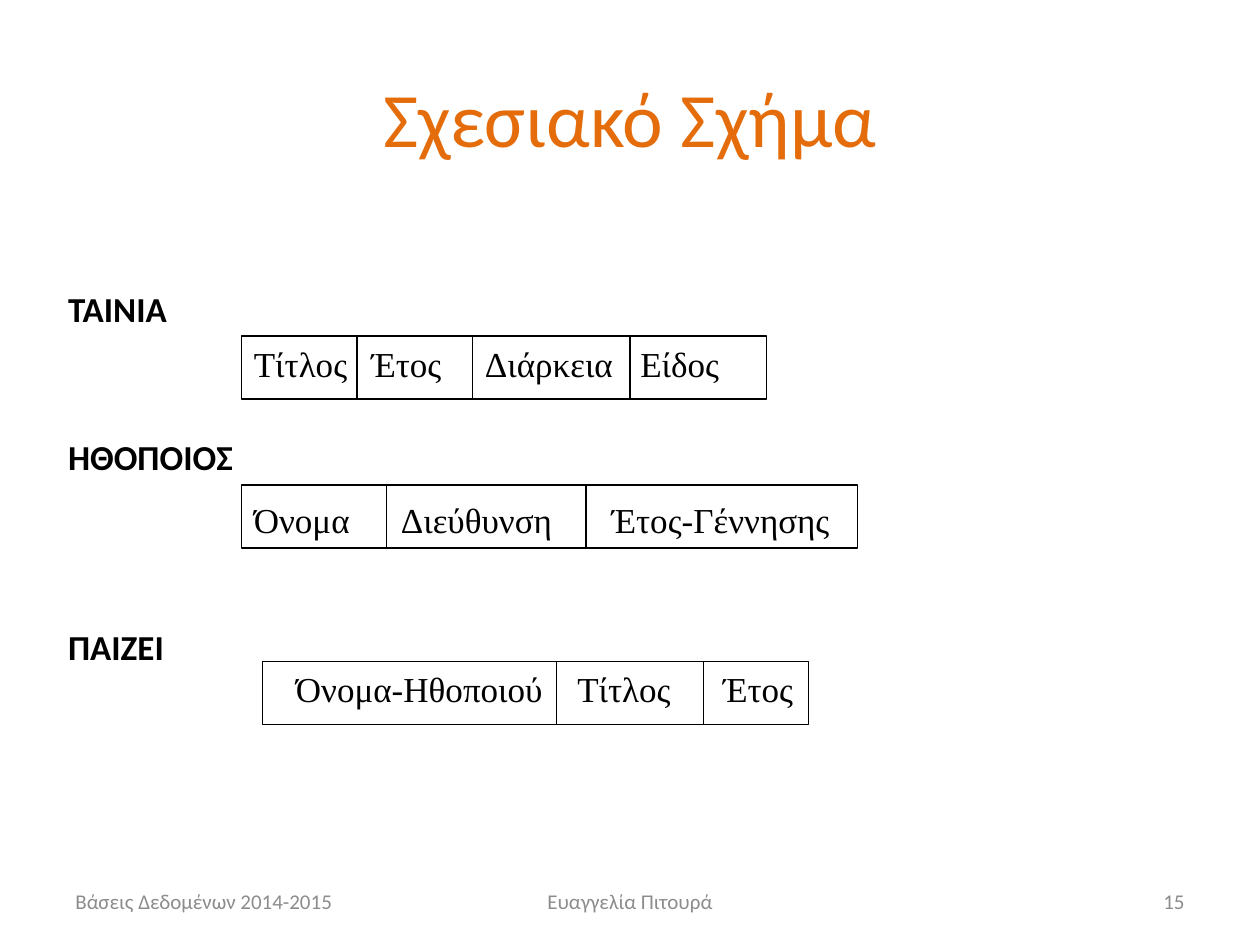
from lxml import etree
from pptx import Presentation
from pptx.dml.color import RGBColor
from pptx.enum.shapes import MSO_CONNECTOR, MSO_SHAPE
from pptx.enum.text import MSO_ANCHOR, MSO_AUTO_SIZE, PP_ALIGN
from pptx.oxml.ns import qn
from pptx.util import Inches, Pt

LEFT, MID, RIGHT = PP_ALIGN.LEFT, PP_ALIGN.CENTER, PP_ALIGN.RIGHT
CENTER, TOP = MSO_ANCHOR.MIDDLE, MSO_ANCHOR.TOP
GROW, FIXED = MSO_AUTO_SIZE.SHAPE_TO_FIT_TEXT, MSO_AUTO_SIZE.NONE
RECT, LINE = MSO_SHAPE.RECTANGLE, MSO_CONNECTOR.STRAIGHT
INK = {"title": "E46C0A", "text": "000000", "foot": "8C8C8C"}
SANS, SERIF = "Calibri", "Times New Roman"

deck = Presentation()
deck.slide_width, deck.slide_height = Inches(10), Inches(7.5)
unit = deck.slide_width / 120
slide = deck.slides.add_slide(deck.slide_layouts[5])


def grid(*cells):
    return [round(cell * unit) for cell in cells]


def write(shape, text, size, font, ink, align=LEFT, anchor=TOP, fit=FIXED, bold=False):
    frame = shape.text_frame
    frame.word_wrap = True
    frame.auto_size = fit
    frame.vertical_anchor = anchor
    para = frame.paragraphs[0]
    para.alignment = align
    run = para.add_run()
    run.text = text
    run.font.size = Pt(size)
    run.font.name = font
    run.font.bold = bold
    run.font.color.rgb = RGBColor.from_string(INK[ink])
    props = para._p.get_or_add_pPr()
    if fit == GROW:
        gap = etree.SubElement(props, qn("a:spcBef"))
        etree.SubElement(gap, qn("a:spcPct"), val="50000")
    return props


title = slide.shapes.title
title.left, title.top, title.width, title.height = grid(6, 3.6, 108, 15)
write(title, "Σχεσιακό Σχήμα", 44, SANS, "title", MID, CENTER)

tables = [
    ("ΤΑΙΝΙΑ", 26.8, 33, (23, 32, 50), (34, 45, 60), (23, 32, 92),
     ["Τίτλος", "Έτος", "Διάρκεια", "Είδος"], (11.2, 22, 36.8)),
    ("ΗΘΟΠΟΙΟΣ", 40.9, 39.4, (23, 46.2, 58.7), (36.8, 55.8), (23, 46.9, 68.6),
     ["Όνομα", "Διεύθυνση", "Έτος-Γέννησης"], (14, 34.1)),
    ("ΠΑΙΖΕΙ", 59, 28.7, (25, 63, 52), (53, 67), (27, 63, 68),
     ["Όνομα-Ηθοποιού", "Τίτλος", "Έτος"], (26.8, 40.7)),
]
for name, head, span, (left, top, width), cuts, area, fields, stops in tables:
    label = slide.shapes.add_textbox(*grid(5.3, head, span, 5.2))
    write(label, name, 20, SANS, "text", fit=GROW, bold=True)

    row = slide.shapes.add_textbox(*grid(*area, 5.2))
    props = write(row, "\t".join(fields), 20, SERIF, "text", fit=GROW)
    tabs = etree.SubElement(props, qn("a:tabLst"))
    for stop in grid(*stops):
        etree.SubElement(tabs, qn("a:tab"), pos=str(stop), algn="l")

    box = slide.shapes.add_shape(RECT, *grid(left, top, width, 6))
    box.shadow.inherit = False
    box.fill.background()
    rules = [box]
    for cut in cuts:
        rule = slide.shapes.add_connector(LINE, *grid(cut, top, cut, top + 6))
        etree.SubElement(rule._element.spPr, qn("a:effectLst"))
        rules.append(rule)
    for rule in rules:
        rule.line.color.rgb = RGBColor.from_string(INK["text"])
        rule.line.width = Pt(0.75)

feet = [
    (6, 28, "Βάσεις Δεδομένων 2014-2015", LEFT),
    (41, 38, "Ευαγγελία Πιτουρά", MID),
    (86, 28, "15", RIGHT),
]
for left, width, text, align in feet:
    foot = slide.shapes.add_textbox(*grid(left, 83.4, width, 4.8))
    write(foot, text, 12, SANS, "foot", align, CENTER)

deck.save("out.pptx")
